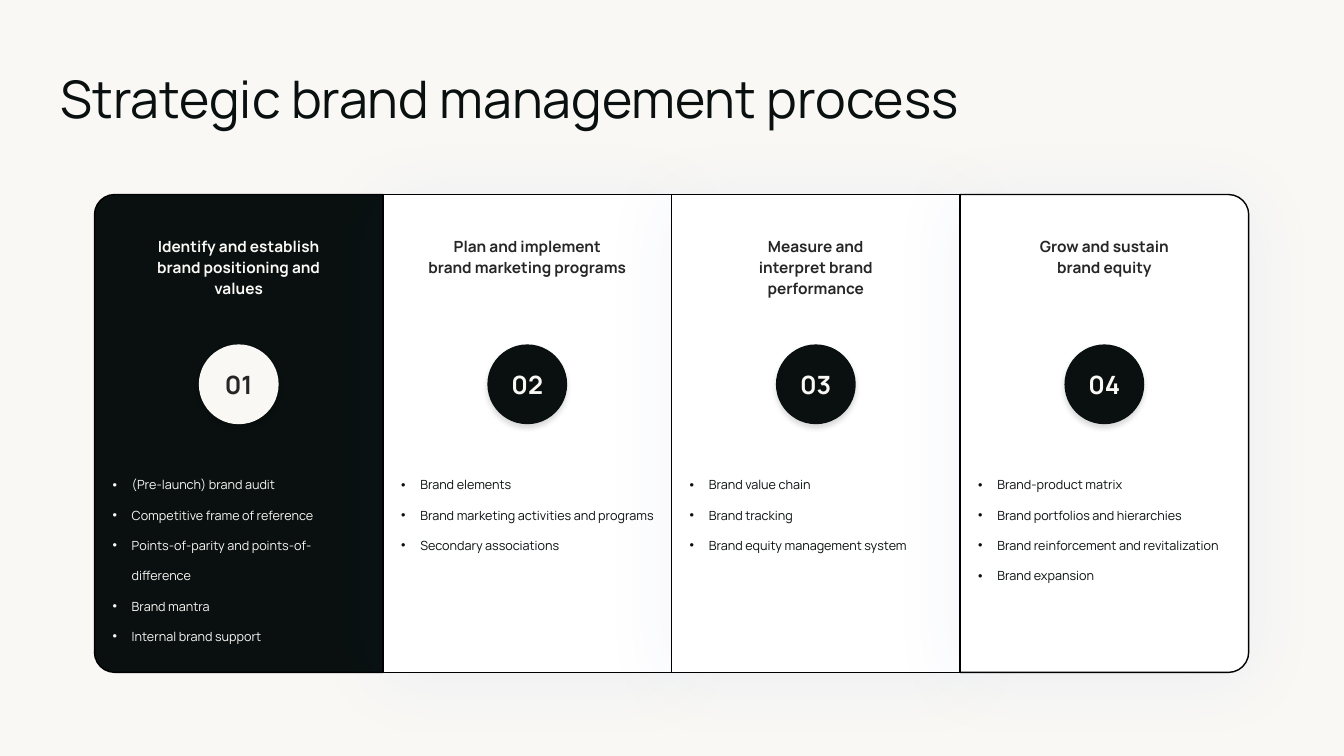
"""Build a four-stage brand management process slide."""
from copy import deepcopy
from dataclasses import dataclass
from typing import NamedTuple

from lxml.etree import SubElement
from pptx import Presentation
from pptx.dml.color import RGBColor
from pptx.enum.shapes import MSO_SHAPE as Form
from pptx.enum.text import MSO_ANCHOR as Anchor, PP_ALIGN as Align
from pptx.oxml.ns import qn
from pptx.util import Emu, Inches, Pt

CREAM = RGBColor(0xF9, 0xF8, 0xF5)
INK = RGBColor(0x09, 0x10, 0x0F)
GREY = RGBColor(0x26, 0x26, 0x26)
WHITE = RGBColor(0xFF, 0xFF, 0xFF)
BLACK = RGBColor(0, 0, 0)
BLUE = RGBColor(0x35, 0x53, 0xD3)

WIDE, HIGH = Inches(13.33), Inches(7.5)
COL, ROW = WIDE / 160, HIGH / 90
LEFT, TOP, PITCH, TALL = 11.25, 23.15, 34.35, 56.9
DISC = 9.5
FONT = "Manrope"


class Box(NamedTuple):
    x: float
    y: float
    w: float
    h: float

    def place(self) -> list:
        return [Emu(round(n * unit)) for n, unit in zip(self, (COL, ROW, COL, ROW))]


class Shade(NamedTuple):
    color: RGBColor
    alpha: int
    blur: int
    dist: int


@dataclass
class Stage:
    title: str
    width: float
    items: list
    form: Form = Form.ROUNDED_RECTANGLE
    round: float = 0
    turn: int = 0
    fill: RGBColor = WHITE
    head: RGBColor = GREY
    body: RGBColor = INK
    disc: RGBColor = INK
    mark: RGBColor = CREAM
    shade: Shade | None = Shade(BLUE, 5, 52, 4)


STAGES = [
    Stage("Identify and establish brand positioning and values", 26.9,
          ["(Pre-launch) brand audit", "Competitive frame of reference",
           "Points-of-parity and points-of-difference", "Brand mantra",
           "Internal brand support"],
          Form.ROUND_2_SAME_RECTANGLE, 0.07, 270, INK, CREAM, CREAM, CREAM, GREY, None),
    Stage("Plan and implement\nbrand marketing programs", 28.3,
          ["Brand elements", "Brand marketing activities and programs",
           "Secondary associations"]),
    Stage("Measure and\ninterpret brand\nperformance", 24.2,
          ["Brand value chain", "Brand tracking", "Brand equity management system"]),
    Stage("Grow and sustain brand equity", 20,
          ["Brand-product matrix", "Brand portfolios and hierarchies",
           "Brand reinforcement and revitalization", "Brand expansion"],
          Form.ROUND_2_SAME_RECTANGLE, 0.07, 90),
]


def apply(target, values: dict) -> None:
    for name, value in values.items():
        setattr(target, name, value)


def cast(shape, shade: Shade | None) -> None:
    shape.shadow.inherit = False
    if shade is None:
        return
    glow = SubElement(shape._element.spPr.find(qn("a:effectLst")), qn("a:outerShdw"),
                      blurRad=str(Pt(shade.blur)), dist=str(Pt(shade.dist)),
                      dir="5400000", algn="t", rotWithShape="0")
    tint = SubElement(glow, qn("a:srgbClr"), val=str(shade.color))
    SubElement(tint, qn("a:alpha"), val=str(shade.alpha * 1000))


def write(para, text: str, size: float, color: RGBColor, bold: bool = False, **form) -> None:
    para.text = text
    apply(para, form)
    for run in para.runs:
        apply(run.font, {"name": FONT, "size": Pt(size), "bold": bold})
        run.font.color.rgb = color
    for gap in para._p.findall(qn("a:br")):
        gap.append(deepcopy(para.runs[0]._r.rPr))


def add_text(slide, box: Box, inset: bool = False):
    frame = slide.shapes.add_textbox(*box.place()).text_frame
    side, edge = (Inches(0.1), Inches(0.05)) if inset else (0, 0)
    apply(frame, {"word_wrap": True, "margin_left": side, "margin_right": side,
                  "margin_top": edge, "margin_bottom": edge})
    return frame


def add_panel(slide, stage: Stage, x: float) -> None:
    w, h = (TALL, PITCH) if stage.turn else (PITCH, TALL)
    box = Box(x + (PITCH - w) / 2, TOP + (TALL - h) / 2, w, h)
    panel = slide.shapes.add_shape(stage.form, *box.place())
    panel.adjustments[0] = stage.round
    panel.rotation = stage.turn
    panel.fill.solid()
    panel.fill.fore_color.rgb = stage.fill
    panel.line.color.rgb = BLACK
    panel.line.width = Pt(1)
    cast(panel, stage.shade)


def add_disc(slide, stage: Stage, mid: float, label: str) -> None:
    box = Box(mid - DISC / 2, 41, DISC, DISC)
    disc = slide.shapes.add_shape(Form.ROUNDED_RECTANGLE, *box.place())
    disc.adjustments[0] = 0.5
    disc.fill.solid()
    disc.fill.fore_color.rgb = stage.disc
    disc.line.fill.background()
    cast(disc, Shade(BLACK, 15, 4, 3))
    disc.text_frame.vertical_anchor = Anchor.MIDDLE
    write(disc.text_frame.paragraphs[0], label, 18, stage.mark, True, alignment=Align.CENTER)


def add_list(slide, stage: Stage, x: float) -> None:
    frame = add_text(slide, Box(x, 55, 30.4, 4 * len(stage.items)))
    for i, item in enumerate(stage.items):
        para = frame.add_paragraph() if i else frame.paragraphs[0]
        write(para, item, 9, stage.body, line_spacing=2.0)
        props = para._p.get_or_add_pPr()
        props.set("marL", str(Inches(0.19)))
        props.set("indent", str(-Inches(0.19)))
        tint = SubElement(props, qn("a:buClr"))
        SubElement(tint, qn("a:srgbClr"), val=str(stage.body))
        SubElement(props, qn("a:buFont"), typeface="Arial")
        SubElement(props, qn("a:buChar"), char="•")


def main() -> None:
    deck = Presentation()
    apply(deck, {"slide_width": WIDE, "slide_height": HIGH})
    slide = deck.slides.add_slide(deck.slide_layouts[6])
    slide.background.fill.solid()
    slide.background.fill.fore_color.rgb = CREAM
    title = add_text(slide, Box(7.2, 8, 141.5, 8.2))
    write(title.paragraphs[0], "Strategic brand management process", 37, INK)
    lefts = [LEFT + PITCH * i for i in range(len(STAGES))]
    for stage, x in zip(STAGES, lefts):
        add_panel(slide, stage, x)
    for i, (stage, x) in enumerate(zip(STAGES, lefts), 1):
        mid = x + PITCH / 2
        head = add_text(slide, Box(mid - stage.width / 2, 27.25, stage.width, 8.5), True)
        write(head.paragraphs[0], stage.title, 11, stage.head, True,
              alignment=Align.CENTER, line_spacing=1.15)
        add_disc(slide, stage, mid, f"{i:02}")
        add_list(slide, stage, x + 2.15)
    deck.save("out.pptx")


if __name__ == "__main__":
    main()
